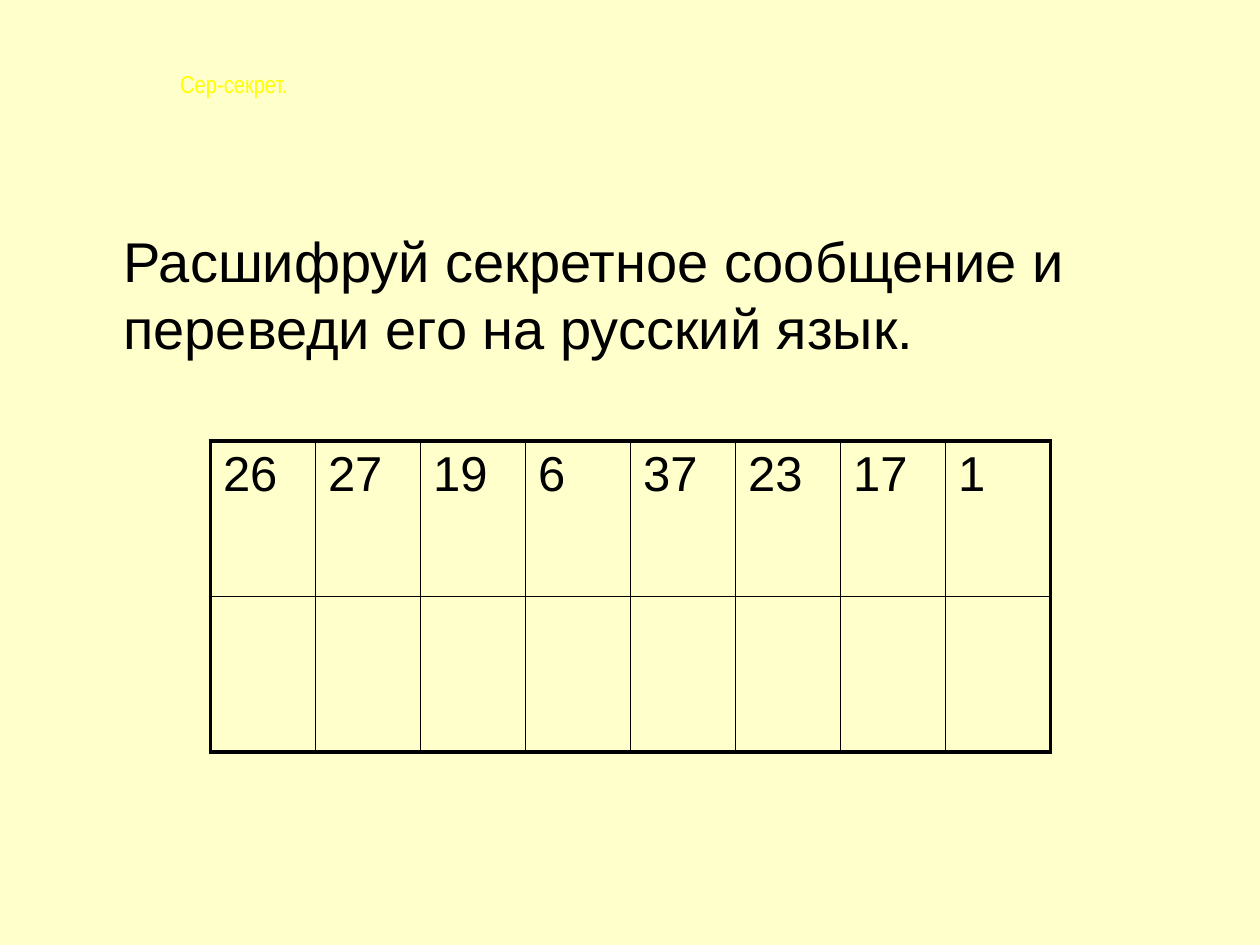
from lxml import etree
from pptx import Presentation
from pptx.dml.color import RGBColor
from pptx.enum.text import MSO_ANCHOR, PP_ALIGN
from pptx.oxml.ns import qn
from pptx.util import Inches, Pt

LEFT, TOP = PP_ALIGN.LEFT, MSO_ANCHOR.TOP
TITLE_ONLY = 5

# Content
TITLE = "Сер-секрет."
TASK = "Расшифруй секретное сообщение и переведи его на русский язык."
CODE = [26, 27, 19, 6, 37, 23, 17, 1]
ROWS = [[str(number) for number in CODE], [""] * len(CODE)]

# Formats
BACKGROUND, BLACK, YELLOW = "FFFFCC", "000000", "FFFF00"
TITLE_FONT = {"name": "Arial Narrow", "size": Pt(14), "bold": False}
TASK_FONT = {"name": "Arial", "size": Pt(32)}
CODE_FONT = {"name": "Arial", "size": Pt(28)}
OUTER, INNER = Pt(2.25), Pt(1)


def color(value):
    return RGBColor.from_string(value)


def write(frame, text, font, ink):
    frame.text = text
    para = frame.paragraphs[0]
    para.alignment = LEFT
    for name, value in font.items():
        setattr(para.font, name, value)
    para.font.color.rgb = color(ink)


def place(box, left, top, width, height):
    box.left, box.top = Inches(left), Inches(top)
    box.width, box.height = Inches(width), Inches(height)


def set_border(cell, side, width):
    properties = cell._tc.get_or_add_tcPr()
    line = etree.SubElement(properties, qn("a:ln" + side), w=str(width))
    fill = etree.SubElement(line, qn("a:solidFill"))
    etree.SubElement(fill, qn("a:srgbClr"), val=BLACK)


deck = Presentation()
deck.slide_width, deck.slide_height = Inches(10), Inches(7.5)
page = deck.slides.add_slide(deck.slide_layouts[TITLE_ONLY])
page.background.fill.solid()
page.background.fill.fore_color.rgb = color(BACKGROUND)

# Title
title = page.shapes.title
place(title, 1.33, 0.5, 7.42, 1.08)
title.text_frame.vertical_anchor = TOP
write(title.text_frame, TITLE, TITLE_FONT, YELLOW)

# Task
task = page.shapes.add_textbox(0, 0, 0, 0)
place(task, 0.5, 1.75, 9, 4.95)
task.text_frame.word_wrap = True
task.text_frame.margin_left = Inches(0.48)
write(task.text_frame, TASK, TASK_FONT, BLACK)

# Cipher table: thick outer frame, thin inner grid
last_row, last_column = len(ROWS) - 1, len(CODE) - 1
table = page.shapes.add_table(
    len(ROWS), len(CODE), Inches(1.67), Inches(3.5), Inches(6.67), Inches(2.47)
).table
table.first_row = table.horz_banding = False
for r, row in enumerate(ROWS):
    for c, text in enumerate(row):
        cell = table.cell(r, c)
        on_frame = {"L": c == 0, "R": c == last_column, "T": r == 0, "B": r == last_row}
        for side, outside in on_frame.items():
            set_border(cell, side, OUTER if outside else INNER)
        cell.fill.background()
        write(cell.text_frame, text, CODE_FONT, BLACK)

deck.save("out.pptx")
